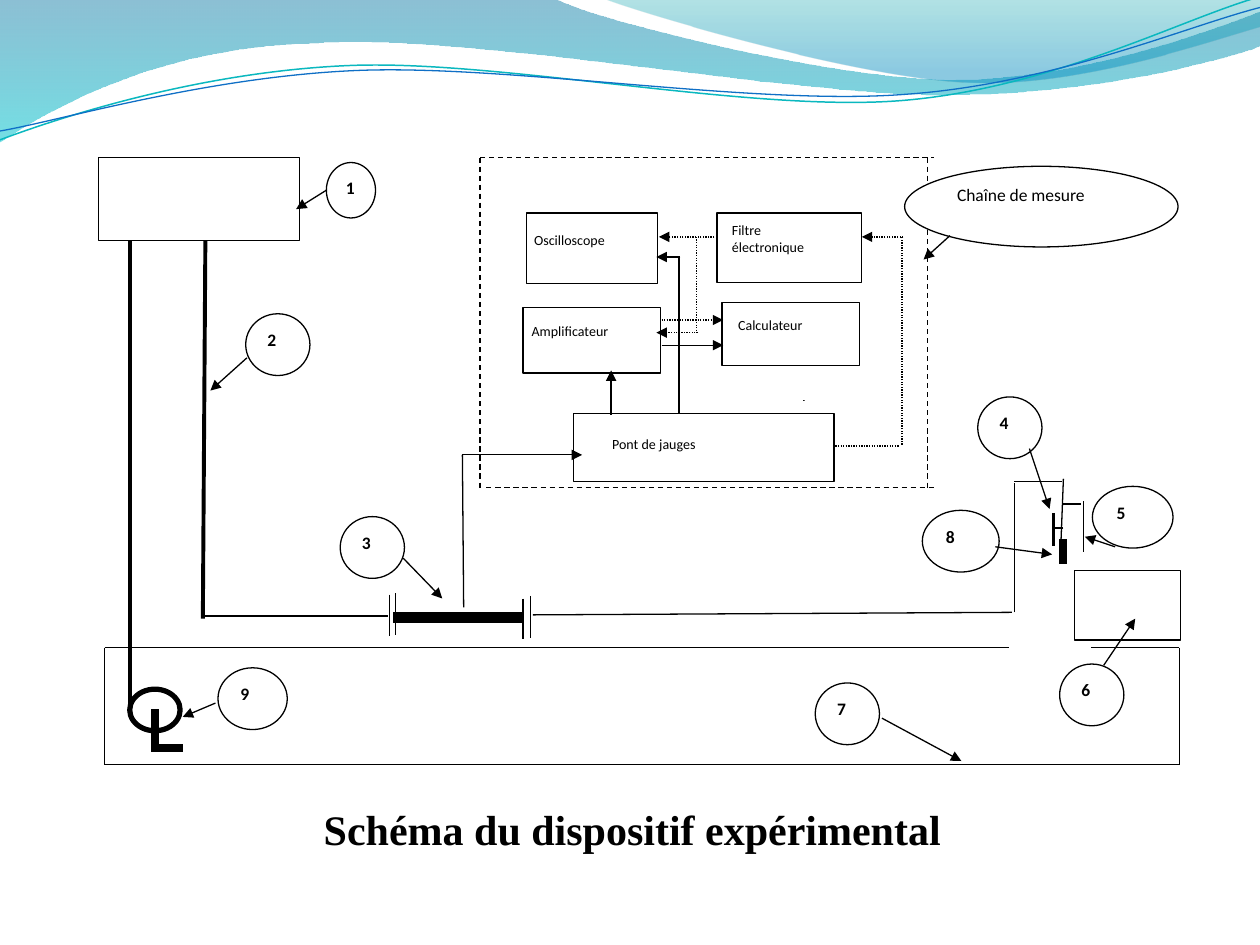
"""Build the slide showing the diagram of the experimental set-up."""
import math
from lxml import etree
from pptx import Presentation
from pptx import util as u
from pptx.dml.color import RGBColor
from pptx.enum import dml, shapes, text
from pptx.oxml.ns import qn

COLOURS = {
    "ink": "000000", "paper": "FFFFFF", "sea": "0074A1", "lagoon": "00C6CF",
    "mint": "00A1A9", "sky": "008BBF", "teal": "0AB8BF", "blue": "0F6FC6",
}
RGB = {name: RGBColor.from_string(code) for name, code in COLOURS.items()}
CM_PER_INCH = 2.54
SOLID, DOTTED, DASHED = None, dml.MSO_LINE.ROUND_DOT, dml.MSO_LINE.DASH
RECTANGLE, OVAL = shapes.MSO_SHAPE.RECTANGLE, shapes.MSO_SHAPE.OVAL

deck = Presentation()
deck.slide_width, deck.slide_height = u.Cm(25.4), u.Cm(19.05)
page = deck.slides.add_slide(deck.slide_layouts[6])


def add_box(kind, frame, label="", size=8, bold=False, font="Calibri", border=0.75):
    place = [u.Cm(value * CM_PER_INCH) for value in frame]
    if kind is None:
        box = page.shapes.add_textbox(*place)
    else:
        box = page.shapes.add_shape(kind, *place)
        box.shadow.inherit = False
        box.fill.solid()
        box.fill.fore_color.rgb = RGB["paper"]
        if border:
            box.line.color.rgb = RGB["ink"]
            box.line.width = u.Pt(border)
        else:
            box.line.fill.background()
    if label:
        box.text_frame.text = label
        box.text_frame.word_wrap = True
        box.text_frame.vertical_anchor = text.MSO_ANCHOR.TOP
        para = box.text_frame.paragraphs[0]
        para.alignment = text.PP_ALIGN.LEFT
        para.space_after = u.Pt(10)
        span = para.runs[0]
        span.font.name, span.font.size, span.font.bold = font, u.Pt(size), bold
        span.font.color.rgb = RGB["ink"]
    return box


def add_line(ends, width=0.75, dash=SOLID, arrow=False):
    line = page.shapes.add_connector(
        shapes.MSO_CONNECTOR.STRAIGHT, *[u.Cm(value * CM_PER_INCH) for value in ends])
    line.line.color.rgb = RGB["ink"]
    line.line.width = u.Pt(width)
    if dash:
        line.line.dash_style = dash
    if arrow:
        etree.SubElement(line.line._get_or_add_ln(), qn("a:tailEnd"), type="triangle")
    etree.SubElement(line._element.spPr, qn("a:effectLst"))


waves = [
    ([(0, 0), (4.4, -0.01), (4.76, 0.17, 6.64, 0.63, 7.58, 0.63),
      (8.53, 0.63, 9.58, 0.26, 10, 0.09), (10.01, 0.36),
      (9.83, 0.44, 8.7, 0.76, 7.46, 0.75), (6.22, 0.75, 3.82, 0.28, 2.57, 0.34),
      (1.29, 0.36, 0.46, 0.83, -0.01, 1.13)],
     [("sea", 0, 45), ("lagoon", 1, 55)], None, None, 0, (0, 0)),
    ([(4.79, -0.01), (5.09, 0.11, 6.82, 0.62, 7.69, 0.65),
      (8.56, 0.69, 9.61, 0.32, 10, 0.21), (10, 0)],
     [("mint", 0, 30), ("sky", 0.8, 45)], None, None, 0, (0, 0)),
    ([(0, 1.11), (0.48, 0.93, 1.58, 0.57, 2.77, 0.52),
      (3.95, 0.47, 5.93, 0.89, 7.13, 0.8), (8.33, 0.71, 9.38, 0.15, 9.98, -0.02)],
     None, "teal", 0.85, 2.7, (4.99, 0.57)),
    ([(0, 1.04), (0.47, 0.96, 1.64, 0.61, 2.83, 0.56),
      (4.03, 0.51, 5.97, 0.84, 7.17, 0.75), (8.36, 0.67, 9.41, 0.21, 10, 0.06)],
     None, "blue", 0.75, 2.7, (5, 0.59)),
]
for segments, gradient, colour, width, tilt, (mid_x, mid_y) in waves:
    sine, cosine = math.sin(math.radians(tilt)), math.cos(math.radians(tilt))
    points = []
    for segment in segments:
        for x, y in zip(segment[::2], segment[1::2]):
            x, y = x - mid_x, y - mid_y
            points.append((u.Cm((mid_x + x * cosine - y * sine) * CM_PER_INCH),
                           u.Cm((mid_y + x * sine + y * cosine) * CM_PER_INCH)))
    builder = page.shapes.build_freeform(*points[0])
    builder.add_line_segments(points[1:], close=bool(gradient))
    wave = builder.convert_to_shape()
    wave.shadow.inherit = False
    wave.rotation = -tilt % 360
    steps = iter(list(wave._element.spPr.iter(qn("a:lnTo"))))
    for segment in segments[1:]:
        step = next(steps)
        if len(segment) == 6:
            step.addprevious(curve := etree.Element(qn("a:cubicBezTo")))
            for piece in (step, next(steps), next(steps)):
                curve.append(piece[0])
                piece.getparent().remove(piece)
    if gradient:
        wave.line.fill.background()
        wave.fill.gradient()
        wave.fill.gradient_angle = 270
        for stop, (name, position, _) in zip(wave.fill.gradient_stops, gradient):
            stop.position, stop.color.rgb = position, RGB[name]
        for node, (_, _, opacity) in zip(wave._element.spPr.iter(qn("a:srgbClr")), gradient):
            etree.SubElement(node, qn("a:alpha"), val=str(opacity * 1000))
    else:
        wave.fill.background()
        wave.line.color.rgb = RGB[colour]
        wave.line.width = u.Pt(width)

instruments = [
    ((4.15, 2.44, 1.09, 0.52), None, (4.12, 2.51, 1.15, 0.35), "Amplificateur"),
    ((4.55, 3.28, 2.07, 0.54), RECTANGLE, (4.76, 3.41, 1.72, 0.4), "Pont de jauges"),
    ((4.18, 1.69, 1.04, 0.56), None, (4.14, 1.79, 1.06, 0.31), "Oscilloscope"),
    ((5.69, 1.69, 1.15, 0.55), RECTANGLE, (5.71, 1.71, 1.01, 0.5), "Filtre électronique"),
    ((5.73, 2.4, 1.09, 0.5), RECTANGLE, (5.76, 2.46, 0.94, 0.33), "Calculateur"),
]
for frame, label_kind, label_frame, label in instruments:
    add_box(RECTANGLE, frame)
    add_box(label_kind, label_frame, label, border=0)

reservoir, weighing_tank, dot = (0.78, 1.25, 1.6, 0.66), (8.53, 4.53, 0.84, 0.55), (6.38, 3.18, 0, 0)
for frame in (reservoir, weighing_tank, dot):
    add_box(RECTANGLE, frame)

signal_arrows = [(4.85, 3.29, 4.85, 2.94), (5.4, 2.04, 5.21, 2.04),
                 (5.25, 2.74, 5.74, 2.74), (3.67, 3.61, 4.62, 3.61)]
dotted_arrows = [(7.17, 1.88, 6.84, 1.88), (5.69, 1.88, 5.23, 1.88),
                 (5.54, 2.64, 5.21, 2.64), (5.25, 2.54, 5.74, 2.54)]
dotted_wires = [(6.61, 3.54, 7.14, 3.54), (7.16, 3.53, 7.16, 1.88), (5.53, 1.88, 5.53, 2.64)]
chain_border = [(3.81, 1.25, 7.41, 1.25), (3.81, 1.25, 3.81, 3.87),
                (3.86, 3.87, 7.41, 3.87), (7.36, 1.25, 7.36, 3.87)]
thin_pipes = [
    (5.39, 3.28, 5.39, 2.04), (1.63, 4.89, 3.08, 4.89), (3.09, 4.72, 3.09, 5.05),
    (3.14, 4.71, 3.14, 5.04), (4.15, 4.75, 4.15, 5.07), (4.21, 4.73, 4.21, 5.06),
    (3.67, 3.61, 3.68, 4.82), (4.23, 4.88, 8.03, 4.86), (8.05, 4.86, 8.05, 3.83),
    (8.05, 3.82, 8.43, 3.82), (8.44, 3.8, 8.42, 4.32), (8.44, 4, 8.58, 4),
    (8.6, 3.98, 8.6, 4.38),
]
basin = [(0.83, 5.14, 8.01, 5.14), (8.66, 5.14, 9.36, 5.14), (9.36, 5.14, 9.36, 6.07),
         (9.36, 6.07, 0.83, 6.07), (0.83, 5.14, 0.83, 6.07)]
main_pipes = [(1.63, 1.91, 1.61, 4.91), (1.03, 1.91, 1.03, 5.66)]
valve = [(8.44, 4.19, 8.35, 4.19), (8.36, 4.07, 8.36, 4.33)]
line_sets = [
    (signal_arrows, 0.75, SOLID, True), (dotted_arrows, 0.75, DOTTED, True),
    (dotted_wires, 0.75, DOTTED, False), (chain_border, 0.75, DASHED, False),
    (thin_pipes + basin, 0.75, SOLID, False), (main_pipes, 2.25, SOLID, False),
    (valve, 1.5, SOLID, False), ([(3.12, 4.9, 4.15, 4.9)], 6, SOLID, False),
]
for lines, width, dash, arrow in line_sets:
    for ends in lines:
        add_line(ends, width, dash, arrow)

add_box(OVAL, (1.03, 5.47, 0.4, 0.33), border=3)
pump_foot = [(1.23, 5.63, 1.23, 5.96), (1.2, 5.94, 1.45, 5.94)]
nozzle = (8.44, 4.28, 8.44, 4.48)
for ends in pump_foot + [nozzle]:
    add_line(ends, 4.5)

balloons = [
    ("1", (2.59, 1.29, 0.39, 0.44), (2.59, 1.51, 2.35, 1.66)),
    ("2", (1.95, 2.49, 0.51, 0.49), (1.96, 2.84, 1.67, 3.1)),
    ("3", (2.7, 4.1, 0.51, 0.49), (3.2, 4.43, 3.51, 4.75)),
    ("4", (7.76, 3.15, 0.51, 0.49), (8.17, 3.56, 8.33, 4.04)),
    ("5", (8.67, 3.86, 0.64, 0.49), (8.85, 4.34, 8.61, 4.26)),
    ("6", (8.41, 5.27, 0.51, 0.49), (8.76, 5.28, 9.01, 4.91)),
    ("7", (6.47, 5.42, 0.51, 0.49), (7, 5.7, 7.63, 6.04)),
    ("8", (7.32, 4.05, 0.61, 0.49), (7.9, 4.34, 8.35, 4.4)),
    ("9", (1.73, 5.3, 0.55, 0.49), (1.71, 5.58, 1.45, 5.69)),
    ("Chaîne de mesure", (7.18, 1.32, 2.17, 0.64), (7.54, 1.87, 7.33, 2.06)),
]
for label, frame, pointer in balloons:
    add_box(OVAL, frame, label, size=10, bold=label.isdigit())
    add_line(pointer, arrow=True)

title = add_box(RECTANGLE, (2.42, 6.33, 5.28, 0.54), "Schéma du dispositif expérimental ",
                size=24, bold=True, font="Times New Roman", border=0)
title.text_frame.paragraphs[0].alignment = text.PP_ALIGN.CENTER

deck.save("out.pptx")
